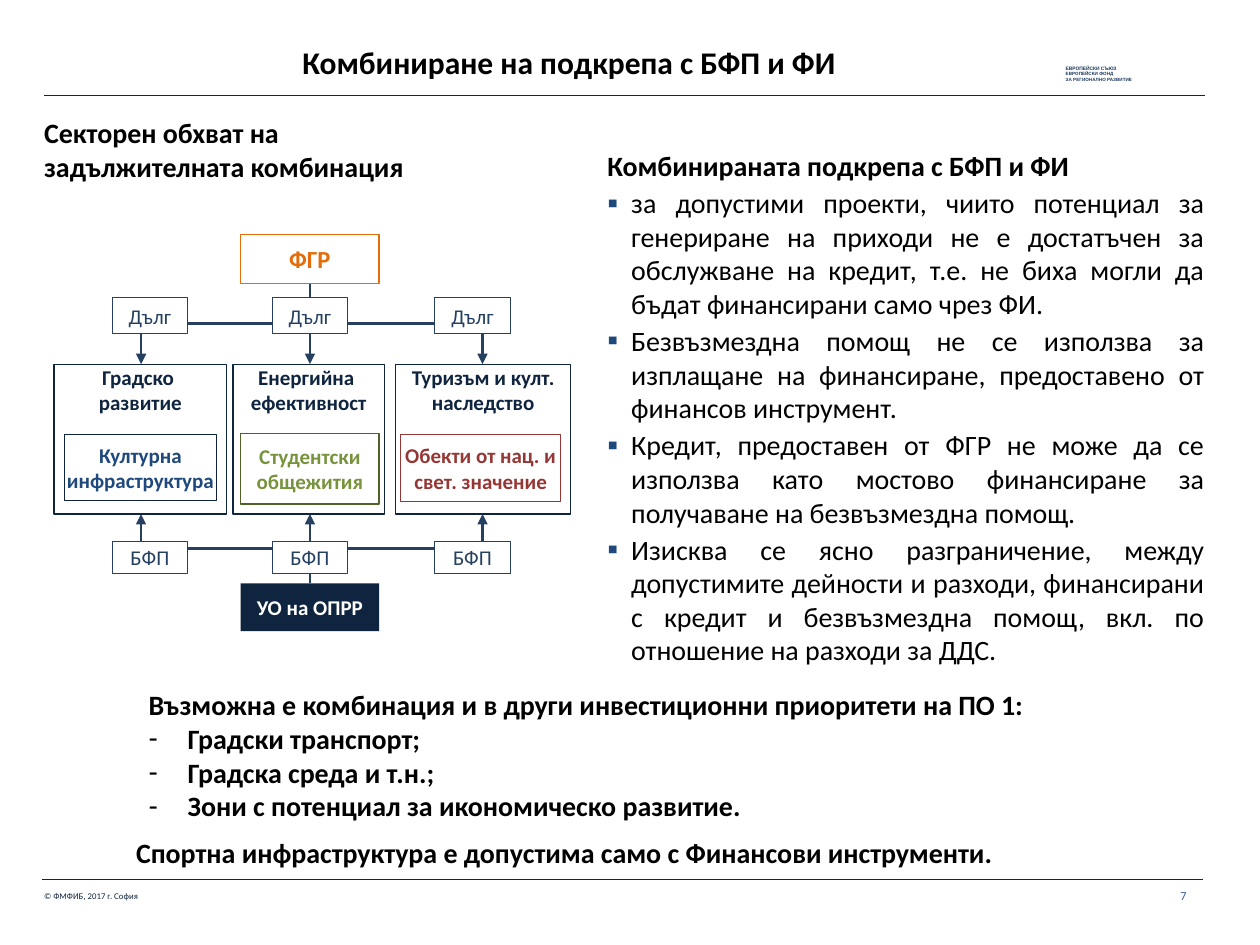
from lxml import etree
from pptx import Presentation
from pptx.dml.color import RGBColor
from pptx.enum.shapes import MSO_CONNECTOR, MSO_SHAPE
from pptx.enum.text import MSO_ANCHOR, PP_ALIGN
from pptx.oxml.ns import qn
from pptx.util import Inches, Pt

STRAIGHT, ELBOW = MSO_CONNECTOR.STRAIGHT, MSO_CONNECTOR.ELBOW
RECT = MSO_SHAPE.RECTANGLE
TOP, MIDDLE = MSO_ANCHOR.TOP, MSO_ANCHOR.MIDDLE
LEFT, CENTER, JUSTIFY = PP_ALIGN.LEFT, PP_ALIGN.CENTER, PP_ALIGN.JUSTIFY
COLORS = {
    "navy": "0F243E", "slate": "254061", "header": "17375E", "number": "376092",
    "blue": "1F497D", "orange": "E46C0A", "green": "77933C", "olive": "4F6228",
    "red": "953735", "black": "000000", "white": "FFFFFF",
}
SECTORS = [
    ("Градско \nразвитие", 0.43, 1.37, 1.12, 0.89,
     "Културна инфраструктура", (0.51, 3.45, 1.21, 0.52), "blue", "navy"),
    ("Енергийна \nефективност", 1.85, 1.2, 2.46, 2.16,
     "Студентски общежития", (1.91, 3.44, 1.1, 0.56), "green", "olive"),
    ("Туризъм и култ. наследство", 3.14, 1.39, 3.83, 3.45,
     "Обекти от нац. и свет. значение", (3.18, 3.45, 1.27, 0.53), "red", "red"),
]
CONDITIONS = [
    "за допустими проекти, чиито потенциал за генериране на приходи не е достатъчен "
    "за обслужване на кредит, т.е. не биха могли да бъдат финансирани само чрез ФИ.",
    "Безвъзмездна помощ не се използва за изплащане на финансиране, предоставено от "
    "финансов инструмент.",
    "Кредит, предоставен от ФГР не може да се използва като мостово финансиране за "
    "получаване на безвъзмездна помощ.",
    "Изисква се ясно разграничение, между допустимите дейности и разходи, финансирани "
    "с кредит и безвъзмездна помощ, вкл. по отношение на разходи за ДДС.",
]
PRIORITIES = ["Градски транспорт;", "Градска среда и т.н.;",
              "Зони с потенциал за икономическо развитие."]


def rgb(name):
    """Return the named colour."""
    return RGBColor.from_string(COLORS[name])


def prepare(tf, anchor=TOP, insets=(0, 0)):
    """Set wrapping, anchor and insets of a text frame."""
    tf.word_wrap = True
    tf.vertical_anchor = anchor
    tf.margin_left = tf.margin_right = Inches(insets[0])
    tf.margin_top = tf.margin_bottom = Inches(insets[1])


def add_paragraph(tf, text, size, color="black", bold=False, align=LEFT, font="Calibri", after=0):
    """Write a paragraph, using the empty first one if there is one."""
    p = tf.paragraphs[0] if not tf.paragraphs[0].runs else tf.add_paragraph()
    p.alignment = align
    p.space_after = Pt(after)
    for i, line in enumerate(text.split("\n")):
        if i:
            p.add_line_break()
        r = p.add_run()
        r.text = line
        r.font.name, r.font.size, r.font.bold = font, Pt(size), bold
        r.font.color.rgb = rgb(color)
    return p


def set_bullet(p, char, indent, color=None, percent=None):
    """Give a paragraph a bullet with a hanging indent."""
    pPr = p._p.get_or_add_pPr()
    pPr.set("marL", str(Inches(indent)))
    pPr.set("indent", str(-Inches(indent)))
    if color:
        clr = etree.SubElement(pPr, qn("a:buClr"))
        etree.SubElement(clr, qn("a:srgbClr"), val=COLORS[color])
    if percent:
        etree.SubElement(pPr, qn("a:buSzPct"), val=str(percent * 1000))
    etree.SubElement(pPr, qn("a:buFont"), typeface="Arial")
    etree.SubElement(pPr, qn("a:buChar"), char=char)


def add_text(s, box, lines, size, insets=(0, 0), **style):
    """Add a text box with one paragraph per line."""
    tf = s.shapes.add_textbox(*map(Inches, box)).text_frame
    prepare(tf, insets=insets)
    for line in lines:
        add_paragraph(tf, line, size, **style)
    return tf


def add_box(s, box, text, color, size=12, bold=True, fill=None, line=None, width=0.75, anchor=MIDDLE):
    """Add a rectangle with centred text."""
    sp = s.shapes.add_shape(RECT, *map(Inches, box))
    sp.shadow.inherit = False
    if fill:
        sp.fill.solid()
        sp.fill.fore_color.rgb = rgb(fill)
    else:
        sp.fill.background()
    if line:
        sp.line.color.rgb = rgb(line)
        sp.line.width = Pt(width)
    else:
        sp.line.fill.background()
    prepare(sp.text_frame, anchor)
    add_paragraph(sp.text_frame, text, size, color, bold, CENTER)


def add_line(s, x1, y1, x2, y2, color="navy", width=0.75, kind=STRAIGHT):
    """Add a connector without a shadow."""
    line = s.shapes.add_connector(kind, *map(Inches, (x1, y1, x2, y2)))
    line.line.color.rgb = rgb(color)
    line.line.width = Pt(width)
    etree.SubElement(line._element.spPr, qn("a:effectLst"))
    return line


def add_arrow(s, x1, y1, x2, y2):
    """Add an arrow that leaves and arrives vertically."""
    if x1 == x2:
        line = add_line(s, x1, y1, x2, y2, "slate", 1.5)
    else:
        cx, cy, dx, dy = (x1 + x2) / 2, (y1 + y2) / 2, (x2 - x1) / 2, (y2 - y1) / 2
        line = add_line(s, cx - dy, cy + dx, cx + dy, cy - dx, "slate", 1.5, ELBOW)
        line._element.spPr.find(qn("a:xfrm")).set("rot", str(90 * 60000))
    etree.SubElement(line.line._get_or_add_ln(), qn("a:tailEnd"), type="triangle")


def add_frame(s):
    """Add the title, header, footer and rules."""
    add_line(s, 0.35, 0.76, 9.56, 0.76)
    add_line(s, 0.33, 6.98, 9.55, 6.98)
    tf = add_text(s, (8.36, 0.47, 0.75, 0.24), ["ЕВРОПЕЙСКИ СЪЮЗ"], 2.8, (0.1, 0.05),
                  color="header", bold=True, font="Arial")
    for line in ("ЕВРОПЕЙСКИ ФОНД", "ЗА РЕГИОНАЛНО РАЗВИТИЕ"):
        add_paragraph(tf, line, 2.6, "header", True, font="Arial")
    add_text(s, (0.35, 7.07, 1.04, 0.14), ["© ФМФИБ, 2017 г. София"], 5, color="navy")
    add_text(s, (9.27, 7, 0.39, 0.3), ["7"], 7, (0.1, 0.05), color="number")
    add_text(s, (2.4, 0.34, 5.04, 0.3), ["Комбиниране на подкрепа с БФП и ФИ"], 18, bold=True)


def add_diagram(s):
    """Add the sectors with debt from above and grants from below."""
    hub = SECTORS[1][3]
    for name, left, width, center, tag_left, part, part_box, color, border in SECTORS:
        add_box(s, (left, 2.89, width, 1.19), name, "navy", line="navy", anchor=TOP)
        add_box(s, part_box, part, color, line=border)
        add_arrow(s, hub, 2.25, center, 2.89)
        add_arrow(s, hub, 4.63, center, 4.08)
    for sector in SECTORS:
        for text, top, height in (("Дълг", 2.36, 0.29), ("БФП", 4.3, 0.25)):
            add_box(s, (sector[4], top, 0.6, height), text, "slate", bold=False,
                    fill="white", line="slate", width=0.5)
    add_box(s, (1.91, 1.86, 1.1, 0.39), "ФГР", "orange", 14, line="orange")
    add_box(s, (1.91, 4.63, 1.1, 0.38), "УО на ОПРР", "white", fill="navy")


def add_conditions(s):
    """Add the bulleted conditions for combined support."""
    tf = add_text(s, (4.82, 1.18, 4.74, 4.15), ["Комбинираната подкрепа с БФП и ФИ"], 16,
                  bold=True, align=JUSTIFY, after=2)
    for text in CONDITIONS:
        set_bullet(add_paragraph(tf, text, 16, align=JUSTIFY, after=2), "▪", 0.19, "blue", 110)


def add_priorities(s):
    """Add the other priorities and the closing remark."""
    tf = add_text(s, (1.18, 5.46, 7.17, 1.08),
                  ["Възможна е комбинация и в други инвестиционни приоритети на ПО 1:"], 16, bold=True)
    for text in PRIORITIES:
        set_bullet(add_paragraph(tf, text, 16, bold=True), "-", 0.31)
    add_text(s, (1.08, 6.63, 7.17, 0.27),
             ["Спортна инфраструктура е допустима само с Финансови инструменти."], 16, bold=True)


def main():
    """Build and save the slide."""
    prs = Presentation()
    prs.slide_width, prs.slide_height = Inches(10), Inches(7.5)
    s = prs.slides.add_slide(prs.slide_layouts[6])
    add_frame(s)
    add_text(s, (0.35, 0.92, 5.35, 0.54),
             ["Секторен обхват на", "задължителната комбинация"], 16, bold=True)
    add_diagram(s)
    add_conditions(s)
    add_priorities(s)
    prs.save("out.pptx")


if __name__ == "__main__":
    main()
